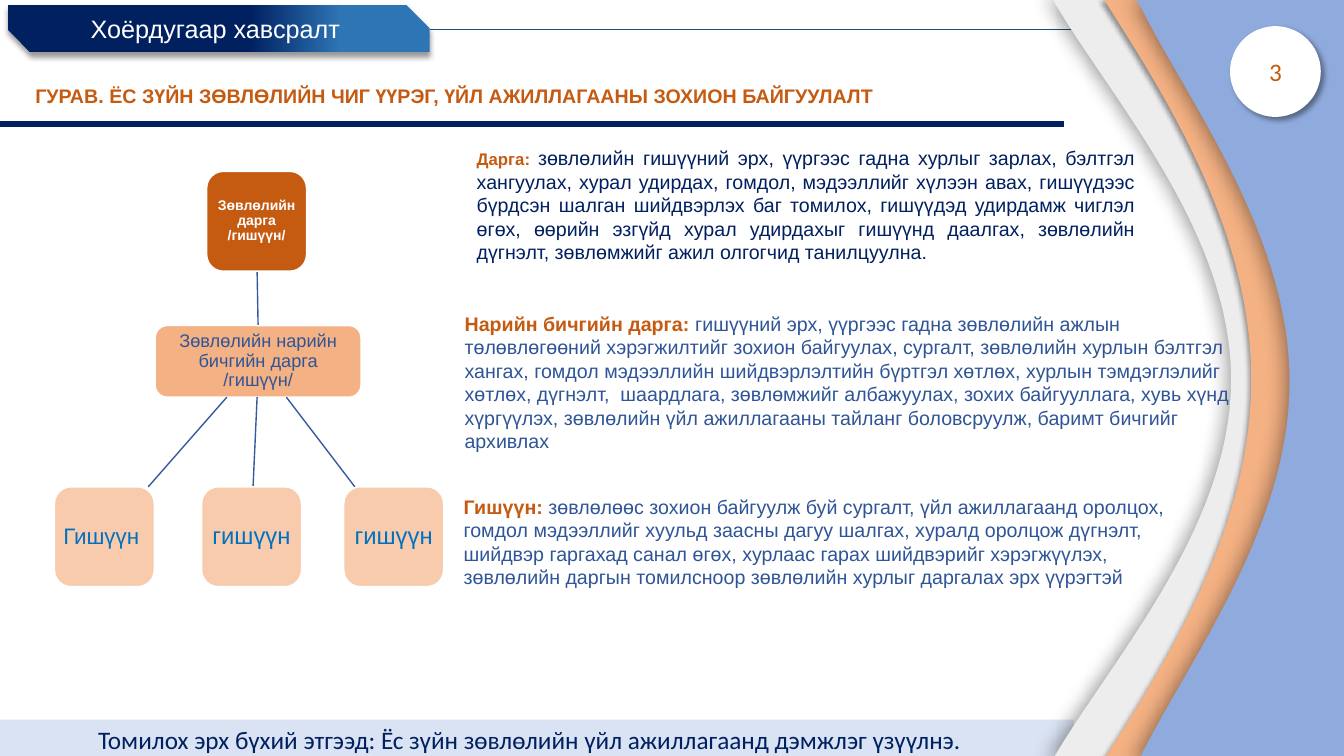
import dataclasses

import lxml.etree
import pptx
import pptx.dml.color
import pptx.enum.shapes
import pptx.enum.text
import pptx.oxml.ns
import pptx.util

Inches = pptx.util.Inches
Pt = pptx.util.Pt
Shapes = pptx.enum.shapes.MSO_SHAPE
Align = pptx.enum.text.PP_ALIGN
Anchor = pptx.enum.text.MSO_ANCHOR
qn = pptx.oxml.ns.qn


@dataclasses.dataclass(frozen=True)
class Theme:
    font: str = "Arial"
    plain_font: str = "Calibri"
    navy: str = "002060"
    blue: str = "2E75B6"
    steel: str = "1F4E79"
    text_blue: str = "2F5597"
    link_blue: str = "365B9D"
    member_blue: str = "0070C0"
    sky: str = "8FAADC"
    pale: str = "DAE3F3"
    rust: str = "C55A11"
    orange: str = "F4B183"
    peach: str = "F8CBAD"
    grey: str = "EDEDED"
    white: str = "FFFFFF"
    large: float = 18
    member: float = 17
    first_member: float = 16
    body: float = 14
    secretary: float = 13
    lead: float = 12
    leader: float = 10


THEME = Theme()


def color(code):
    return pptx.dml.color.RGBColor.from_string(code)


def set_font(font, size, code, bold=False, name=THEME.font):
    font.name, font.size, font.bold = name, Pt(size), bold
    font.color.rgb = color(code)


def add_shadow(shape, blur, distance, angle):
    effects = shape._element.spPr.find(qn("a:effectLst"))
    shadow = lxml.etree.SubElement(
        effects, qn("a:outerShdw"), blurRad=str(Pt(blur)), dist=str(Pt(distance)),
        dir=str(angle * 60000), algn="ctr", rotWithShape="0")
    black = lxml.etree.SubElement(shadow, qn("a:srgbClr"), val="000000")
    lxml.etree.SubElement(black, qn("a:alpha"), val="40000")


def paint(shape, fill, line=None):
    shape.shadow.inherit = False
    shape.fill.solid()
    shape.fill.fore_color.rgb = color(fill)
    if line:
        shape.line.color.rgb = color(line)
        shape.line.width = Pt(1)
    else:
        shape.line.fill.background()


def add_box(slide, kind, box, fill, line=None):
    shape = slide.shapes.add_shape(kind, *map(Inches, box))
    paint(shape, fill, line)
    return shape


def write(shape, text, size, code, bold=False, name=THEME.font,
          align=Align.CENTER, anchor=Anchor.MIDDLE):
    frame = shape.text_frame
    frame.word_wrap = True
    frame.vertical_anchor = anchor
    paragraph = frame.paragraphs[0]
    paragraph.text = text
    paragraph.alignment = align
    set_font(paragraph.font, size, code, bold, name)
    return frame


def add_line(slide, start, end, code, width=1):
    line = slide.shapes.add_connector(
        pptx.enum.shapes.MSO_CONNECTOR.STRAIGHT, *map(Inches, start + end))
    line.line.color.rgb = color(code)
    line.line.width = Pt(width)
    lxml.etree.SubElement(line._element.spPr, qn("a:effectLst"))


def add_banner(slide, box):
    left, top, width, height = box
    add_line(slide, (left + width, 0.29), (13.31, 0.29), THEME.steel)
    banner = add_box(slide, Shapes.SNIP_2_DIAG_RECTANGLE, box, THEME.navy)
    banner.adjustments[0], banner.adjustments[1] = 0, 0.487
    banner.fill.gradient()
    banner.fill.gradient_angle = 180
    stops = ((0.21, THEME.blue), (0.43, THEME.navy))
    for stop, (position, code) in zip(banner.fill.gradient_stops, stops):
        stop.position = position
        stop.color.rgb = color(code)
    add_shadow(banner, 4, 3, 90)
    write(banner, "Хоёрдугаар хавсралт ", THEME.large, THEME.white)


def add_heading(slide, box):
    title = slide.shapes.title
    title.left, title.top, title.width, title.height = map(Inches, box)
    frame = write(title, "ГУРАВ. ЁС ЗҮЙН ЗӨВЛӨЛИЙН ЧИГ ҮҮРЭГ, ҮЙЛ АЖИЛЛАГААНЫ ЗОХИОН БАЙГУУЛАЛТ",
                  THEME.body, THEME.rust, True, align=Align.JUSTIFY, anchor=Anchor.TOP)
    frame.auto_size = pptx.enum.text.MSO_AUTO_SIZE.NONE
    frame.paragraphs[0].line_spacing = 0.9
    add_line(slide, (0, 1.23), (10.55, 1.23), THEME.navy, 3.75)


def add_footer(slide, box):
    footer = add_box(slide, Shapes.RECTANGLE, box, THEME.pale)
    write(footer, "Томилох эрх бүхий этгээд: Ёс зүйн зөвлөлийн үйл ажиллагаанд дэмжлэг үзүүлнэ. ",
          THEME.large, THEME.navy, name=THEME.plain_font, anchor=Anchor.TOP)


def add_wave(slide, box, bend, crest, fill, shadow=None):
    """Band with a left edge bulging to the right as far as crest."""
    left, top, width, height = box
    right, bottom, middle = left + width, top + height, top + height / 2
    upper = [(left + 0.05, top + 0.08), (bend, top + 1.02),
             (crest, top + 2.33), (crest, middle)]
    lower = [(x, 2 * middle - y) for x, y in reversed(upper)]
    outline = upper + lower[1:] + [(left, bottom), (right, bottom), (right, top), (left, top)]
    start, *others = [(Inches(x), Inches(y)) for x, y in outline]
    builder = slide.shapes.build_freeform(*start)
    builder.add_line_segments(others)
    wave = builder.convert_to_shape()
    # Each three of the first six segments become one curve
    segments = list(wave._element.iter(qn("a:lnTo")))
    for first in (0, 3):
        curve = lxml.etree.Element(qn("a:cubicBezTo"))
        segments[first].addprevious(curve)
        for segment in segments[first:first + 3]:
            curve.append(segment[0])
            segment.getparent().remove(segment)
    paint(wave, fill)
    if shadow:
        add_shadow(wave, *shadow)


def add_waves(slide, top, height):
    wide_shadow = (14, 3, 180)
    add_wave(slide, (11.46, top, 1.46, height), 12.1, 12.46, THEME.sky)
    add_wave(slide, (10.43, top, 2.49, height), 11.04, 12.21, THEME.grey, wide_shadow)
    add_wave(slide, (10.94, top, 1.98, height), 11.59, 12.41, THEME.orange, (4, 3, 135))
    add_wave(slide, (11.27, top + 0.02, 2.11, height), 11.79, 12.79, THEME.sky, wide_shadow)


def add_page_number(slide, box):
    badge = add_box(slide, Shapes.OVAL, box, THEME.white)
    add_shadow(badge, 4, 3, 45)
    write(badge, "3", THEME.large, THEME.rust, name=THEME.plain_font)


def add_node(slide, box, text, fill, size, code, bold=False):
    node = add_box(slide, Shapes.ROUNDED_RECTANGLE, box, fill, THEME.white)
    frame = write(node, text, size, code, bold)
    frame.margin_left = frame.margin_right = Inches(0.03)
    frame.margin_top = frame.margin_bottom = Inches(0.03)
    frame.paragraphs[0].line_spacing = 0.9


def add_council_chart(slide, left, top):
    side = 0.99
    secretary_top, member_top = top + 1.53, top + 3.13
    secretary_bottom = secretary_top + 0.71
    add_line(slide, (left + 2.01, top + side), (left + 2.02, secretary_top), THEME.link_blue)
    add_node(slide, (left + 1.51, top, side, side), "Зөвлөлийн дарга /гишүүн/",
             THEME.rust, THEME.leader, THEME.white, True)
    add_node(slide, (left + 1, secretary_top, 2.04, 0.71),
             "Зөвлөлийн нарийн бичгийн дарга /гишүүн/",
             THEME.orange, THEME.secretary, THEME.text_blue)
    # Members: offset, label, size, link start and link end
    members = ((0, "Гишүүн ", THEME.first_member, 1.71, 0.93),
               (1.46, "гишүүн", THEME.member, 2.01, 1.97),
               (2.87, "гишүүн", THEME.member, 2.3, 2.98))
    for offset, label, size, start, end in members:
        add_line(slide, (left + start, secretary_bottom), (left + end, member_top),
                 THEME.link_blue)
        add_node(slide, (left + offset, member_top, side, side), label,
                 THEME.peach, size, THEME.member_blue)


def add_duty(slide, box, role, duty, code, role_size=THEME.body, align=Align.LEFT):
    frame = slide.shapes.add_textbox(*map(Inches, box)).text_frame
    frame.word_wrap = True
    paragraph = frame.paragraphs[0]
    paragraph.alignment = align
    for text, size, run_code, bold in ((role + ": ", role_size, THEME.rust, True),
                                       (duty, THEME.body, code, False)):
        run = paragraph.add_run()
        run.text = text
        set_font(run.font, size, run_code, bold)


def add_duties(slide, left, top):
    add_duty(slide, (left + 0.13, top, 6.73, 1.28), "Дарга",
             "зөвлөлийн гишүүний эрх, үүргээс гадна хурлыг зарлах, бэлтгэл хангуулах, хурал удирдах, гомдол, мэдээллийг хүлээн авах, гишүүдээс бүрдсэн шалган шийдвэрлэх баг томилох, гишүүдэд удирдамж чиглэл өгөх, өөрийн эзгүйд хурал удирдахыг гишүүнд даалгах, зөвлөлийн дүгнэлт, зөвлөмжийг ажил олгогчид танилцуулна. ",
             THEME.navy, THEME.lead, Align.JUSTIFY)
    add_duty(slide, (left + 0.01, top + 1.64, 7.83, 1.51), "Нарийн бичгийн дарга",
             "гишүүний эрх, үүргээс гадна зөвлөлийн ажлын төлөвлөгөөний хэрэгжилтийг зохион байгуулах, сургалт, зөвлөлийн хурлын бэлтгэл хангах, гомдол мэдээллийн шийдвэрлэлтийн бүртгэл хөтлөх, хурлын тэмдэглэлийг хөтлөх, дүгнэлт,  шаардлага, зөвлөмжийг албажуулах, зохих байгууллага, хувь хүнд хүргүүлэх, зөвлөлийн үйл ажиллагааны тайланг боловсруулж, баримт бичгийг архивлах",
             THEME.text_blue)
    add_duty(slide, (left, top + 3.46, 7.33, 1.04), "Гишүүн",
             "зөвлөлөөс зохион байгуулж буй сургалт, үйл ажиллагаанд оролцох, гомдол мэдээллийг хуульд заасны дагуу шалгах, хуралд оролцож дүгнэлт, шийдвэр гаргахад санал өгөх, хурлаас гарах шийдвэрийг хэрэгжүүлэх, зөвлөлийн даргын томилсноор зөвлөлийн хурлыг даргалах эрх үүрэгтэй",
             THEME.text_blue)


def main():
    presentation = pptx.Presentation()
    presentation.slide_width, presentation.slide_height = Inches(13.33), Inches(7.5)
    slide = presentation.slides.add_slide(presentation.slide_layouts[5])
    add_banner(slide, (0.08, 0.05, 4.18, 0.47))
    add_heading(slide, (0.25, 0.81, 8.74, 0.64))
    add_footer(slide, (-0.09, 7.14, 10.74, 0.4))
    add_waves(slide, -0.02, 7.57)
    add_page_number(slide, (12.2, 0.26, 0.9, 0.9))
    add_council_chart(slide, 0.54, 1.7)
    add_duties(slide, 4.5, 1.4)
    presentation.save("out.pptx")


if __name__ == "__main__":
    main()
